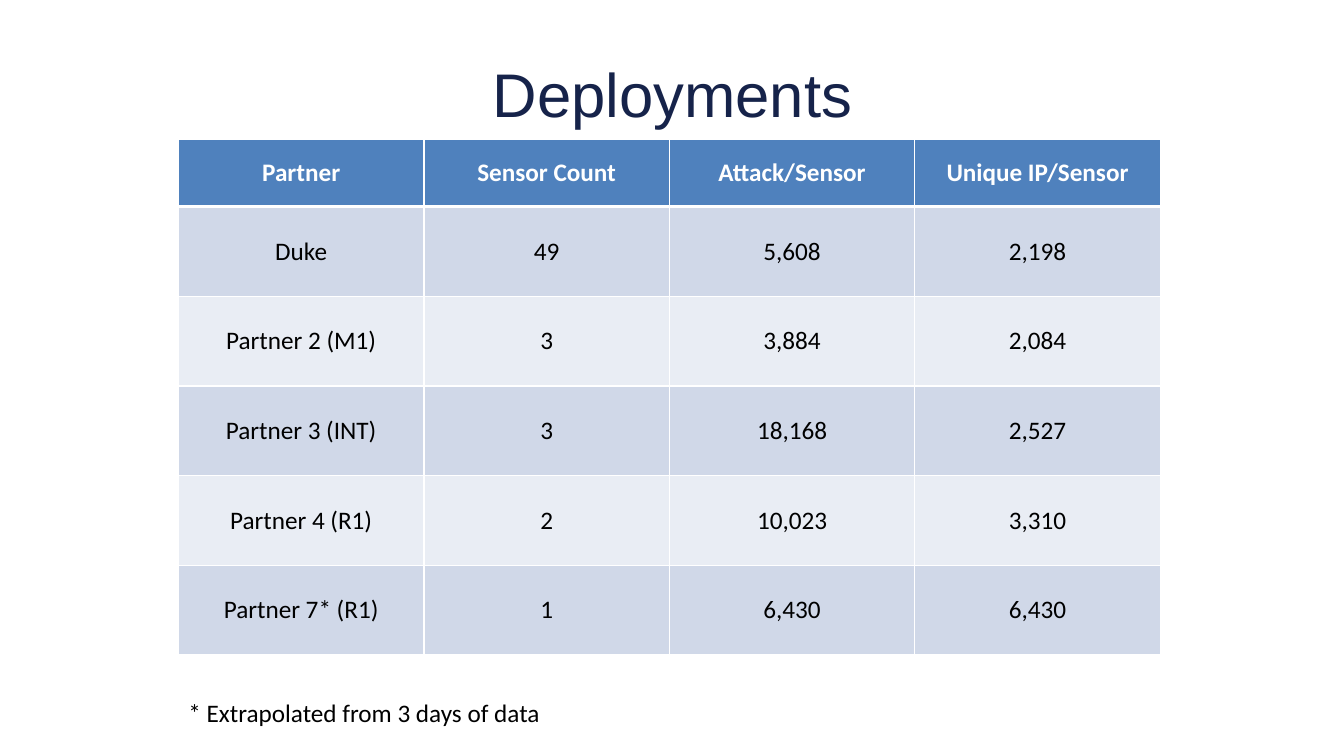
"""Build the Deployments slide: a title, a partner table and a footnote."""
from lxml import etree
from pptx import Presentation
from pptx.dml.color import RGBColor
from pptx.enum.text import MSO_ANCHOR, PP_ALIGN
from pptx.oxml.ns import qn
from pptx.util import Inches, Pt

CENTER, LEFT = PP_ALIGN.CENTER, PP_ALIGN.LEFT
MIDDLE, TOP = MSO_ANCHOR.MIDDLE, MSO_ANCHOR.TOP

TITLE = "Deployments"
FOOTNOTE = "* Extrapolated from 3 days of data"
ROWS = [
    ("Partner", "Sensor Count", "Attack/Sensor", "Unique IP/Sensor"),
    ("Duke", "49", "5,608", "2,198"),
    ("Partner 2 (M1)", "3", "3,884", "2,084"),
    ("Partner 3 (INT)", "3", "18,168", "2,527"),
    ("Partner 4 (R1)", "2", "10,023", "3,310"),
    ("Partner 7* (R1)", "1", "6,430", "6,430"),
]
NAVY, WHITE, BLACK = "16234A", "FFFFFF", "000000"
HEADER_FILL = "4F81BD"
BAND_FILLS = ("E9EDF4", "D0D8E8")
TABLE_LEFT, TABLE_TOP, TABLE_WIDTH = 1.77, 1.38, 9.74
HEADER_HEIGHT, ROW_HEIGHT = 0.67, 0.89


def color(code):
    return RGBColor.from_string(code)


def write(paragraph, text, size, font, ink, align, bold=False):
    paragraph.text = text
    paragraph.alignment = align
    paragraph.font.size = Pt(size)
    paragraph.font.name = font
    paragraph.font.bold = bold
    paragraph.font.color.rgb = color(ink)


def add_text(page, bounds, anchor, *style):
    box = page.shapes.add_textbox(*[Inches(length) for length in bounds])
    box.text_frame.word_wrap = True
    box.text_frame.vertical_anchor = anchor
    write(box.text_frame.paragraphs[0], *style)


def add_borders(cell, widths):
    properties = cell._tc.get_or_add_tcPr()
    for place, (side, width) in enumerate(widths.items()):
        line = etree.Element(qn(f"a:ln{side}"), w=str(Pt(width)))
        fill = etree.SubElement(line, qn("a:solidFill"))
        etree.SubElement(fill, qn("a:srgbClr"), val=WHITE)
        properties.insert(place, line)


def add_partner_table(page):
    height = HEADER_HEIGHT + ROW_HEIGHT * (len(ROWS) - 1)
    table = page.shapes.add_table(
        len(ROWS), len(ROWS[0]), Inches(TABLE_LEFT), Inches(TABLE_TOP),
        Inches(TABLE_WIDTH), Inches(height)).table
    for index, values in enumerate(ROWS):
        header = index == 0
        table.rows[index].height = Inches(HEADER_HEIGHT if header else ROW_HEIGHT)
        for column, value in enumerate(values):
            cell = table.cell(index, column)
            cell.vertical_anchor = MIDDLE
            cell.fill.solid()
            cell.fill.fore_color.rgb = color(HEADER_FILL if header else BAND_FILLS[index % 2])
            add_borders(cell, {"L": 1, "R": 1, "T": 3 if index == 1 else 1,
                               "B": 3 if header else 1})
            write(cell.text_frame.paragraphs[0], value, 18, "Calibri",
                  WHITE if header else BLACK, CENTER, header)


def main():
    deck = Presentation()
    deck.slide_width, deck.slide_height = Inches(13.33), Inches(7.5)
    page = deck.slides.add_slide(deck.slide_layouts[6])
    add_text(page, (0.67, 0.3, 12, 1.25), MIDDLE, TITLE, 44, "Arial", NAVY, CENTER)
    add_partner_table(page)
    add_text(page, (TABLE_LEFT, 6.87, 3.82, 0.4), TOP, FOOTNOTE, 18, "Calibri", BLACK, LEFT)
    deck.save("out.pptx")


if __name__ == "__main__":
    main()
